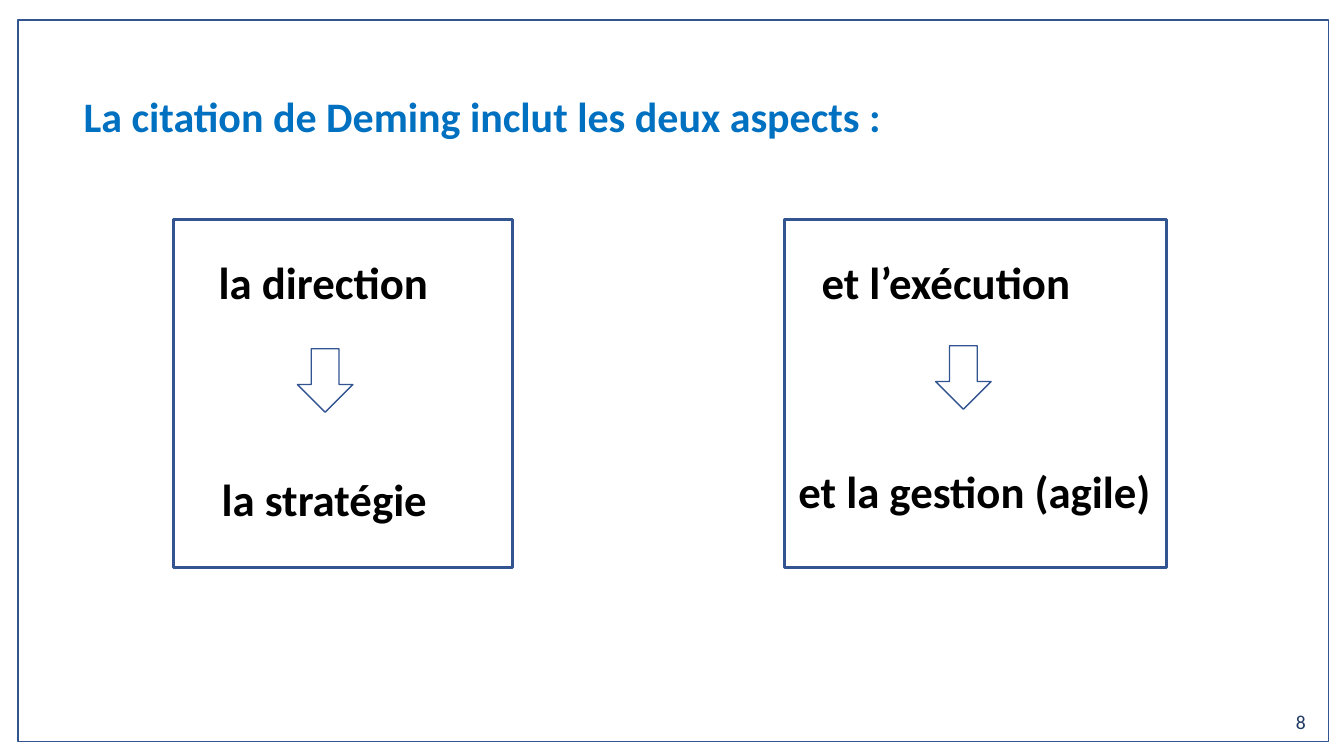
from dataclasses import dataclass

from pptx import Presentation
from pptx.dml.color import RGBColor
from pptx.enum.shapes import MSO_SHAPE
from pptx.enum.text import MSO_ANCHOR, PP_ALIGN
from pptx.util import Inches, Pt


@dataclass(frozen=True)
class Theme:
    font: str = "Calibri"
    line: str = "325491"
    title: str = "0070C0"
    body: str = "000000"
    page: str = "203864"
    big: int = 32
    head: int = 30
    small: int = 14
    thin: float = 1
    thick: float = 2.25


THEME = Theme()


def write(shape, text, size=THEME.big, color=THEME.body, bold=True,
          align=PP_ALIGN.LEFT, anchor=MSO_ANCHOR.TOP, wrap=False):
    frame = shape.text_frame
    frame.word_wrap = wrap
    frame.vertical_anchor = anchor
    para = frame.paragraphs[0]
    para.alignment = align
    run = para.add_run()
    run.text = text
    run.font.name = THEME.font
    run.font.size = Pt(size)
    run.font.bold = bold
    run.font.color.rgb = RGBColor.from_string(color)


def inches(*box):
    return [Inches(n) for n in box]


def outline(slide, kind, box, width=THEME.thin):
    shape = slide.shapes.add_shape(kind, *inches(*box))
    shape.shadow.inherit = False
    shape.fill.background()
    shape.line.color.rgb = RGBColor.from_string(THEME.line)
    shape.line.width = Pt(width)


def label(slide, box, text, **style):
    write(slide.shapes.add_textbox(*inches(*box)), text, **style)


def header(slide, box):
    title = slide.shapes.title
    title.left, title.top, title.width, title.height = inches(*box)
    write(title, "La citation de Deming inclut les deux aspects :",
          size=THEME.head, color=THEME.title, wrap=True)


def panel(slide, box, top, low, arrow):
    left, y, _, _ = box
    for text, dx, dy, width in (top, low):
        label(slide, (left + dx, y + dy, width, 0.64), text)
    dx, dy = arrow
    outline(slide, MSO_SHAPE.DOWN_ARROW, (left + dx, y + dy, 0.55, 0.63))
    outline(slide, MSO_SHAPE.RECTANGLE, box, THEME.thick)


def footer(slide, box):
    label(slide, box, "8", size=THEME.small, color=THEME.page, bold=False,
          align=PP_ALIGN.RIGHT, anchor=MSO_ANCHOR.MIDDLE, wrap=True)


def main():
    deck = Presentation()
    deck.slide_width, deck.slide_height = inches(13.33, 7.5)
    slide = deck.slides.add_slide(deck.slide_layouts[5])
    outline(slide, MSO_SHAPE.RECTANGLE, (0.18, 0.2, 13, 7.16))
    header(slide, (0.73, 0.85, 8.69, 0.61))
    panel(slide, (1.72, 2.18, 3.36, 3.45),
          ("la direction", 0.35, 0.3, 2.31),
          ("la stratégie", 0.38, 2.45, 2.28), (1.23, 1.28))
    panel(slide, (7.78, 2.18, 3.79, 3.45),
          ("et l’exécution", 0.27, 0.3, 2.75),
          ("et la gestion (agile)", 0.04, 2.37, 3.75), (1.5, 1.25))
    footer(slide, (10.05, 6.96, 3, 0.4))
    deck.save("out.pptx")


if __name__ == "__main__":
    main()
